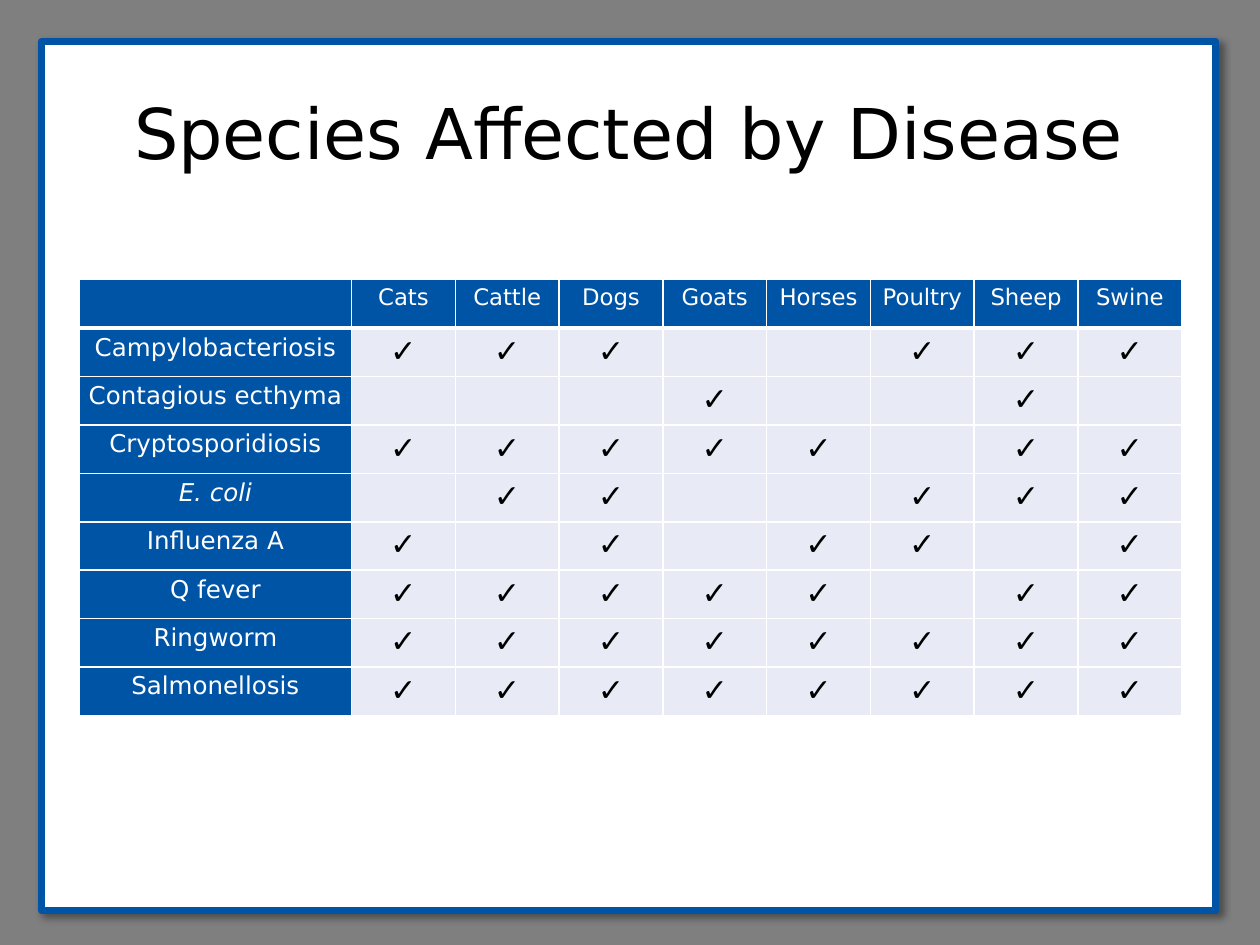
from lxml.etree import SubElement
from pptx import Presentation
from pptx.dml.color import RGBColor
from pptx.enum.shapes import MSO_SHAPE
from pptx.enum.text import MSO_ANCHOR, PP_ALIGN
from pptx.oxml import parse_xml
from pptx.oxml.ns import nsdecls, qn
from pptx.util import Inches, Pt

BLUE = RGBColor(0x00, 0x54, 0xA6)
PALE = RGBColor(0xE8, 0xEB, 0xF5)
GREY = RGBColor(0x7F, 0x7F, 0x7F)
WHITE = RGBColor(0xFF, 0xFF, 0xFF)
BLACK = RGBColor(0x00, 0x00, 0x00)
FONT = "DejaVu Sans"
TICK = "✓"

SPECIES = ["Cats", "Cattle", "Dogs", "Goats", "Horses", "Poultry", "Sheep", "Swine"]
# One mark per species: x is affected, - is not
DISEASES = {
    "Campylobacteriosis": "xxx--xxx",
    "Contagious ecthyma": "---x--x-",
    "Cryptosporidiosis": "xxxxx-xx",
    "E. coli": "-xx--xxx",
    "Influenza A": "x-x-xx-x",
    "Q fever": "xxxxx-xx",
    "Ringworm": "xxxxxxxx",
    "Salmonellosis": "xxxxxxxx",
}


def format_para(para, size, color, bold=False, italic=False):
    para.alignment = PP_ALIGN.CENTER
    font = para.font
    font.name, font.size, font.color.rgb = FONT, Pt(size), color
    font.bold, font.italic = bold, italic


def add_frame(page, left, top, width, height):
    """Place the white panel with its shadow behind the title."""
    frame = page.shapes.add_shape(MSO_SHAPE.RECTANGLE, left, top, width, height)
    frame.fill.solid()
    frame.fill.fore_color.rgb = WHITE
    frame.line.color.rgb = BLUE
    frame.line.width = Pt(4)
    frame.shadow.inherit = False
    effects = frame.element.spPr.find(qn("a:effectLst"))
    effects.append(parse_xml(
        f'<a:outerShdw {nsdecls("a")} blurRad="{Pt(4)}" dist="{Pt(3)}" dir="2700000"'
        ' algn="tl" rotWithShape="0"><a:srgbClr val="000000">'
        '<a:alpha val="40000"/></a:srgbClr></a:outerShdw>'))
    page.shapes.title.element.addprevious(frame.element)


def set_title(page, left, top, width, height):
    title = page.shapes.title
    title.left, title.top, title.width, title.height = left, top, width, height
    title.text_frame.text = "Species Affected by Disease"
    title.text_frame.vertical_anchor = MSO_ANCHOR.MIDDLE
    format_para(title.text_frame.paragraphs[0], 40, BLACK)


def set_borders(cell, bottom):
    """Draw white cell borders, with the bottom one as wide as given."""
    props = cell._tc.get_or_add_tcPr()
    for position, (side, width) in enumerate(
            [("lnL", 1), ("lnR", 1), ("lnT", 1), ("lnB", bottom)]):
        line = props.makeelement(qn(f"a:{side}"), {"w": str(Pt(width))})
        fill = SubElement(line, qn("a:solidFill"))
        SubElement(fill, qn("a:srgbClr"), val=str(WHITE))
        props.insert(position, line)


def fill_cell(cell, text, fill, size, color, bottom=1, **style):
    cell.text = text
    cell.margin_left = cell.margin_right = Inches(0.07)
    cell.margin_top = cell.margin_bottom = Inches(0.04)
    cell.fill.solid()
    cell.fill.fore_color.rgb = fill
    format_para(cell.text_frame.paragraphs[0], size, color, **style)
    set_borders(cell, bottom)


def add_species_table(page, left, top, width, height):
    table = page.shapes.add_table(
        len(DISEASES) + 1, len(SPECIES) + 1, left, top, width, height).table
    table.first_row = table.horz_banding = False
    label_width = Inches(2.16)
    for number, column in enumerate(table.columns):
        column.width = label_width if number == 0 else (width - label_width) // len(SPECIES)
    for row in table.rows:
        row.height = height // len(table.rows)

    for column, name in enumerate(["", *SPECIES]):
        fill_cell(table.cell(0, column), name, BLUE, 13, WHITE, bottom=3)
    for row, (disease, marks) in enumerate(DISEASES.items(), start=1):
        fill_cell(table.cell(row, 0), disease, BLUE, 14, WHITE, italic=disease == "E. coli")
        for column, mark in enumerate(marks, start=1):
            fill_cell(table.cell(row, column), TICK if mark == "x" else "",
                      PALE, 18, BLACK, bottom=3 if row == 0 else 1, bold=True)


def main():
    deck = Presentation()
    deck.slide_width, deck.slide_height = Inches(10), Inches(7.5)
    page = deck.slides.add_slide(deck.slide_layouts[5])
    page.background.fill.solid()
    page.background.fill.fore_color.rgb = GREY
    add_frame(page, Inches(0.33), Inches(0.33), Inches(9.32), Inches(6.9))
    set_title(page, Inches(0.33), Inches(0.66), Inches(9.32), Inches(0.77))
    add_species_table(page, Inches(0.63), Inches(2.22), Inches(8.75), Inches(3.46))
    deck.save("out.pptx")


if __name__ == "__main__":
    main()
